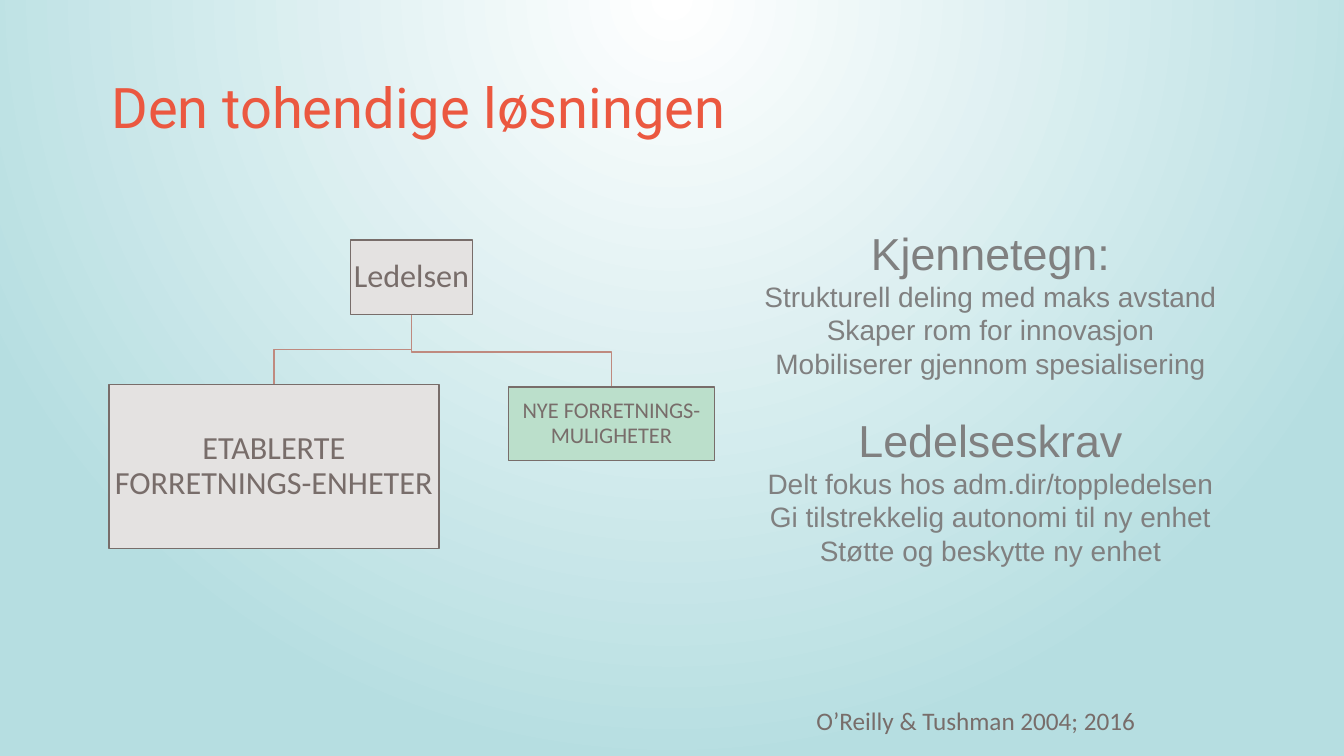
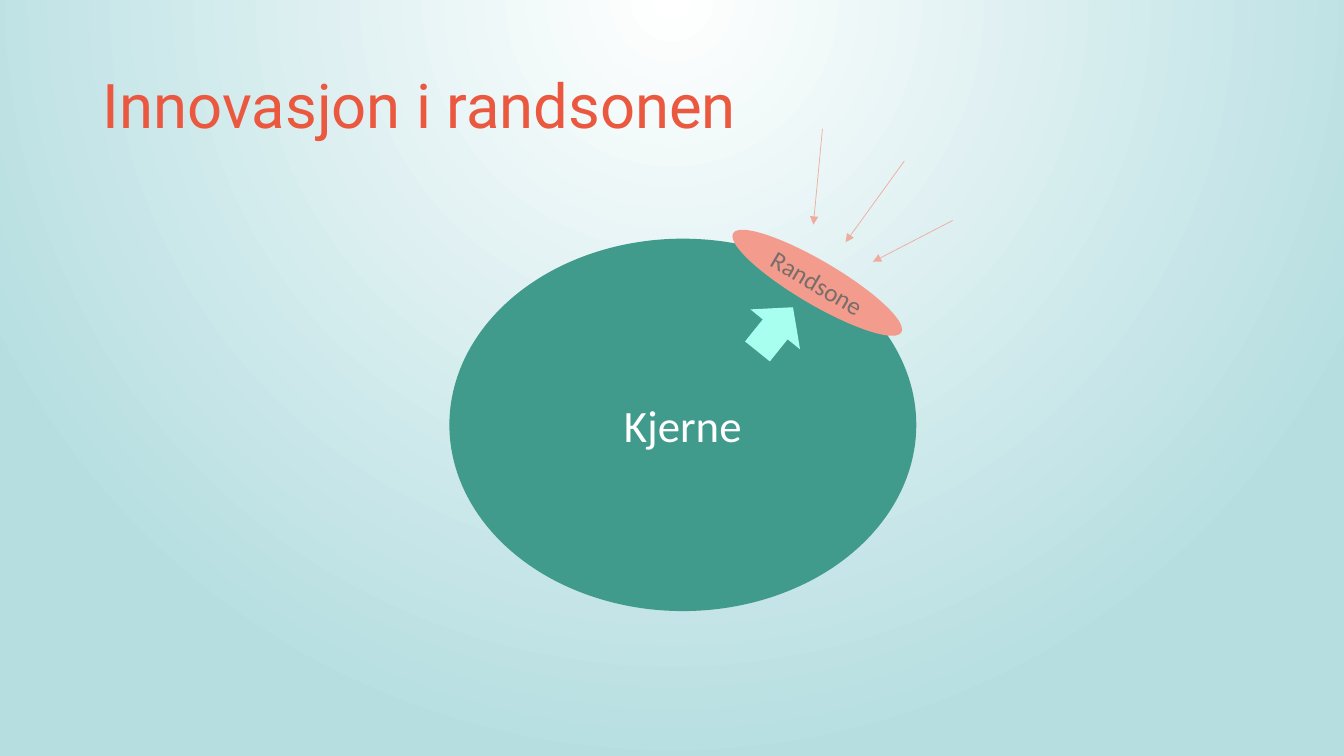
from dataclasses import dataclass

from lxml import etree
from pptx import Presentation
from pptx.dml.color import RGBColor
from pptx.enum.shapes import MSO_CONNECTOR, MSO_SHAPE
from pptx.enum.text import MSO_ANCHOR, MSO_AUTO_SIZE, PP_ALIGN
from pptx.oxml.ns import qn
from pptx.shapes.autoshape import Shape
from pptx.slide import Slide, SlideMaster
from pptx.text.text import TextFrame
from pptx.util import Pt

RECT, OVAL, ARROW = MSO_SHAPE.RECTANGLE, MSO_SHAPE.OVAL, MSO_SHAPE.RIGHT_ARROW
STRAIGHT = MSO_CONNECTOR.STRAIGHT
LEFT, CENTER = PP_ALIGN.LEFT, PP_ALIGN.CENTER
TOP, MIDDLE = MSO_ANCHOR.TOP, MSO_ANCHOR.MIDDLE
GROW = MSO_AUTO_SIZE.SHAPE_TO_FIT_TEXT


@dataclass(frozen=True)
class Theme:
    title: str = "EB5840"
    ink: str = "786D6A"
    gray: str = "808080"
    white: str = "FFFFFF"
    sky: str = "B6DEE1"
    stone: str = "E4E2E1"
    mint: str = "BBDFCB"
    link: str = "BF8A7F"
    core: str = "419B8C"
    rim: str = "F39B8C"
    push: str = "A9FFEF"
    pull: str = "EFAC9E"
    head: str = "Roboto"
    body: str = "Calibri"
    list: str = "Arial"
    big: float = 32
    item: float = 20
    note: float = 18
    unit: float = 23
    small: float = 16


THEME = Theme()


@dataclass(frozen=True)
class Area:
    x: float
    y: float
    w: float
    h: float

    @property
    def mid(self) -> float:
        return self.x + self.w / 2

    @property
    def low(self) -> float:
        return self.y + self.h


@dataclass(frozen=True)
class Font:
    name: str
    size: float
    color: str


@dataclass(frozen=True)
class Unit:
    text: str
    area: Area
    fill: str
    size: float
    inset: float


@dataclass(frozen=True)
class Topic:
    head: str
    items: tuple[str, ...]


@dataclass(frozen=True)
class Ray:
    x1: float
    y1: float
    x2: float
    y2: float


BOSS = Unit("Ledelsen", Area(250.5, 171.5, 87, 53), THEME.stone, THEME.unit, 1.5)
TEAMS = (
    Unit("NYE FORRETNINGS-MULIGHETER", Area(363, 276.5, 147.5, 52.5),
         THEME.mint, THEME.small, 1),
    Unit("ETABLERTE FORRETNINGS-ENHETER", Area(78, 274.5, 235.5, 117.5),
         THEME.stone, THEME.unit, 1.5),
)
TOPICS = (
    Topic("Kjennetegn:", (
        "Strukturell deling med maks avstand",
        "Skaper rom for innovasjon",
        "Mobiliserer gjennom spesialisering",
    )),
    Topic("Ledelseskrav", (
        "Delt fokus hos adm.dir/toppledelsen",
        "Gi tilstrekkelig autonomi til ny enhet",
        "Støtte og beskytte ny enhet",
    )),
)
RAYS = (
    Ray(587.5, 92, 581, 160.5),
    Ray(646, 115, 604, 173),
    Ray(680.5, 157.5, 623.5, 187),
)


def tint(code: str) -> RGBColor:
    return RGBColor.from_string(code)


def paint(master: SlideMaster) -> None:
    fill = master.background.fill
    fill.gradient()
    for stop, code in zip(fill.gradient_stops, (THEME.white, THEME.sky)):
        stop.color.rgb = tint(code)
    grad = master.element.find(".//" + qn("a:gradFill"))
    grad.remove(grad.find(qn("a:lin")))
    glow = etree.SubElement(grad, qn("a:path"), {"path": "circle"})
    etree.SubElement(glow, qn("a:fillToRect"),
                     {"l": "50000", "t": "-80000", "r": "50000", "b": "180000"})


def style(frame: TextFrame, fonts: list[Font], align: PP_ALIGN,
          space: float = 1) -> None:
    for para, font in zip(frame.paragraphs, fonts):
        para.alignment = align
        para.line_spacing = space
        for run in para.runs:
            run.font.name = font.name
            run.font.size = Pt(font.size)
            run.font.color.rgb = tint(font.color)


def write(slide: Slide, area: Area, text: str, fonts: list[Font],
          align: PP_ALIGN = LEFT, anchor: MSO_ANCHOR = TOP,
          space: float = 1) -> TextFrame:
    box = slide.shapes.add_textbox(Pt(area.x), Pt(area.y), Pt(area.w), Pt(area.h))
    frame = box.text_frame
    frame.word_wrap = True
    frame.vertical_anchor = anchor
    frame.text = text
    style(frame, fonts, align, space)
    return frame


def title(slide: Slide, text: str, area: Area, size: float) -> None:
    write(slide, area, text, [Font(THEME.head, size, THEME.title)], space=0.9)


def form(slide: Slide, kind: MSO_SHAPE, area: Area, fill: str,
         turn: float = 0) -> Shape:
    shape = slide.shapes.add_shape(kind, Pt(area.x), Pt(area.y), Pt(area.w), Pt(area.h))
    shape.shadow.inherit = False
    shape.fill.solid()
    shape.fill.fore_color.rgb = tint(fill)
    shape.line.fill.background()
    shape.rotation = turn
    return shape


def label(shape: Shape, text: str, font: Font, space: float = 1) -> TextFrame:
    frame = shape.text_frame
    frame.word_wrap = True
    frame.vertical_anchor = MIDDLE
    frame.text = text
    style(frame, [font], CENTER, space)
    return frame


def block(slide: Slide, unit: Unit) -> None:
    shape = form(slide, RECT, unit.area, unit.fill)
    shape.line.color.rgb = tint(THEME.ink)
    shape.line.width = Pt(1)
    frame = label(shape, unit.text, Font(THEME.body, unit.size, THEME.ink), 0.9)
    frame.margin_left = frame.margin_right = Pt(unit.inset)
    frame.margin_top = frame.margin_bottom = Pt(unit.inset)


def branch(slide: Slide, top: Area, end: Area) -> None:
    bend = end.y - 25
    pen = slide.shapes.build_freeform(Pt(top.mid), Pt(top.low))
    pen.add_line_segments(
        [(Pt(x), Pt(y)) for x, y in
         ((top.mid, bend), (end.mid, bend), (end.mid, end.y))],
        close=False)
    line = pen.convert_to_shape()
    line.shadow.inherit = False
    line.fill.background()
    line.line.color.rgb = tint(THEME.link)
    line.line.width = Pt(1)


def beam(slide: Slide, ray: Ray) -> None:
    line = slide.shapes.add_connector(
        STRAIGHT, Pt(ray.x1), Pt(ray.y1), Pt(ray.x2), Pt(ray.y2))
    line.line.color.rgb = tint(THEME.pull)
    line.line.width = Pt(0.5)
    etree.SubElement(line.line._get_or_add_ln(), qn("a:tailEnd"), {"type": "triangle"})
    etree.SubElement(line._element.spPr, qn("a:effectLst"))


def topics(slide: Slide, area: Area) -> None:
    head = Font(THEME.list, THEME.big, THEME.gray)
    item = Font(THEME.list, THEME.item, THEME.gray)
    lines = [line for topic in TOPICS for line in (topic.head, *topic.items)]
    fonts = [font for topic in TOPICS for font in (head, *[item] * len(topic.items))]
    frame = write(slide, area, "\n".join(lines), fonts, CENTER, MIDDLE)
    frame.paragraphs[len(TOPICS[0].items) + 1].space_before = Pt(23)


def split(slide: Slide) -> None:
    title(slide, "Den tohendige løsningen", Area(72.5, 54, 828, 59), 40)
    topics(slide, Area(486.5, 132.5, 442, 301))
    for team in TEAMS:
        branch(slide, BOSS.area, team.area)
    for unit in (BOSS, *TEAMS):
        block(slide, unit)
    frame = write(slide, Area(576, 500.5, 274.5, 29), "O’Reilly & Tushman 2004; 2016",
                  [Font(THEME.body, THEME.note, THEME.ink)])
    frame.auto_size = GROW


def edge(slide: Slide) -> None:
    title(slide, "Innovasjon i randsonen", Area(66.5, 50.5, 828, 104.5), 44)
    core = form(slide, OVAL, Area(321, 170.5, 333.5, 266), THEME.core)
    label(core, "Kjerne", Font(THEME.body, THEME.big, THEME.white))
    rim = form(slide, OVAL, Area(514, 186.5, 139.5, 31), THEME.rim, 30.5)
    label(rim, "Randsone", Font(THEME.body, THEME.note, THEME.ink))
    form(slide, ARROW, Area(533.5, 212.5, 40.5, 45.5), THEME.push, 308.8)
    for ray in RAYS:
        beam(slide, ray)


def main() -> None:
    deck = Presentation()
    deck.slide_width, deck.slide_height = Pt(960), Pt(540)
    paint(deck.slide_master)
    for draw in (split, edge):
        draw(deck.slides.add_slide(deck.slide_layouts[6]))
    deck.save("out.pptx")


if __name__ == "__main__":
    main()
